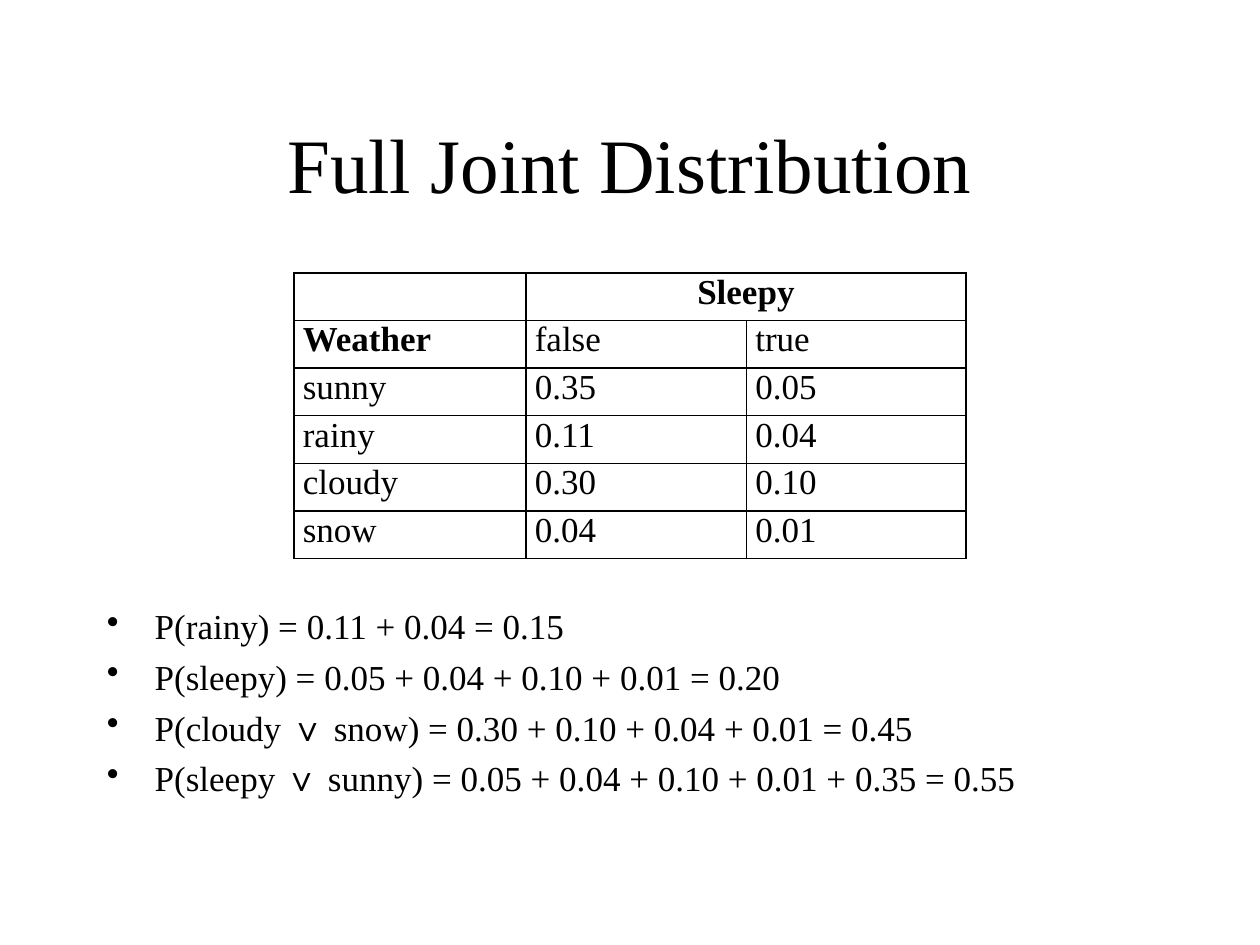
from lxml import etree
from pptx import Presentation
from pptx.dml.color import RGBColor
from pptx.enum.text import MSO_ANCHOR, PP_ALIGN
from pptx.oxml.ns import qn
from pptx.util import Emu, Inches, Pt

BLACK = RGBColor(0x00, 0x00, 0x00)
LEFT, CENTER = PP_ALIGN.LEFT, PP_ALIGN.CENTER
TOP, MIDDLE = MSO_ANCHOR.TOP, MSO_ANCHOR.MIDDLE

GRID_COLUMNS, GRID_ROWS = 120, 90
BLANK_LAYOUT = 6

DISTRIBUTION = [
    ["", "Sleepy", ""],
    ["Weather", "false", "true"],
    ["sunny", "0.35", "0.05"],
    ["rainy", "0.11", "0.04"],
    ["cloudy", "0.30", "0.10"],
    ["snow", "0.04", "0.01"],
]
HEADINGS = {"Sleepy", "Weather"}
QUERIES = [
    "P(rainy) = 0.11 + 0.04 = 0.15",
    "P(sleepy) = 0.05 + 0.04 + 0.10 + 0.01 = 0.20",
    "P(cloudy ∨ snow) = 0.30 + 0.10 + 0.04 + 0.01 = 0.45",
    "P(sleepy ∨ sunny) = 0.05 + 0.04 + 0.10 + 0.01 + 0.35 = 0.55",
]


def write_text(paragraph, text, size=20, font="Times New Roman", color=BLACK,
               bold=False, align=LEFT):
    paragraph.alignment = align
    run = paragraph.add_run()
    run.text = text
    run.font.name = font
    run.font.size = Pt(size)
    run.font.bold = bold
    run.font.color.rgb = color


def add_bullet(paragraph, indent):
    properties = paragraph._p.get_or_add_pPr()
    properties.set("marL", str(indent))
    properties.set("indent", str(-indent))
    etree.SubElement(properties, qn("a:buChar"), char="•")


def add_borders(cell, color, width):
    properties = cell._tc.get_or_add_tcPr()
    for side in ("lnL", "lnR", "lnT", "lnB"):
        line = etree.SubElement(properties, qn(f"a:{side}"), w=str(width))
        fill = etree.SubElement(line, qn("a:solidFill"))
        etree.SubElement(fill, qn("a:srgbClr"), val=str(color))


class SlideBuilder:
    """Holds the style and the slide; places are in grid columns and rows."""

    line_color = BLACK
    line_width = Pt(1)
    bullet_indent = Inches(0.38)
    bullet_gap = Pt(5)
    cell_margin = Inches(0.07)

    def __init__(self, presentation):
        self.column = presentation.slide_width / GRID_COLUMNS
        self.row = presentation.slide_height / GRID_ROWS
        layout = presentation.slide_layouts[BLANK_LAYOUT]
        self.slide = presentation.slides.add_slide(layout)

    def place(self, left, top, width, height):
        return [Emu(round(length)) for length in (
            left * self.column, top * self.row,
            width * self.column, height * self.row)]

    def text_frame(self, area, anchor):
        frame = self.slide.shapes.add_textbox(*self.place(*area)).text_frame
        frame.word_wrap = True
        frame.vertical_anchor = anchor
        return frame

    def title(self, text, area):
        frame = self.text_frame(area, MIDDLE)
        write_text(frame.paragraphs[0], text, size=44, align=CENTER)

    def bullets(self, lines, area):
        frame = self.text_frame(area, TOP)
        for index, line in enumerate(lines):
            paragraph = frame.add_paragraph() if index else frame.paragraphs[0]
            paragraph.space_before = self.bullet_gap
            add_bullet(paragraph, self.bullet_indent)
            write_text(paragraph, line)

    def table(self, rows, area, column_widths):
        frame = self.slide.shapes.add_table(
            len(rows), len(column_widths), *self.place(*area))
        table = frame.table
        for column, width in zip(table.columns, column_widths):
            column.width = Emu(round(width * self.column))
        for row_index, row in enumerate(rows):
            for column_index, text in enumerate(row):
                self.cell(table.cell(row_index, column_index), text)
        return table

    def cell(self, cell, text):
        cell.margin_left = cell.margin_right = self.cell_margin
        cell.margin_top = cell.margin_bottom = 0
        add_borders(cell, self.line_color, self.line_width)
        cell.fill.background()
        if text:
            write_text(cell.text_frame.paragraphs[0], text,
                       bold=text in HEADINGS,
                       align=CENTER if text == "Sleepy" else LEFT)


def main():
    presentation = Presentation()
    presentation.slide_width = Inches(10)
    presentation.slide_height = Inches(7.5)
    builder = SlideBuilder(presentation)

    # Title and worked queries
    builder.title("Full Joint Distribution", (9, 8, 102, 15))
    builder.bullets(QUERIES, (9, 57, 102, 23))

    # Joint probabilities, with one heading over both value columns
    table = builder.table(DISTRIBUTION, (28, 26, 64, 27.2), (22.1, 21, 20.9))
    table.cell(0, 1).merge(table.cell(0, 2))

    presentation.save("out.pptx")


if __name__ == "__main__":
    main()
